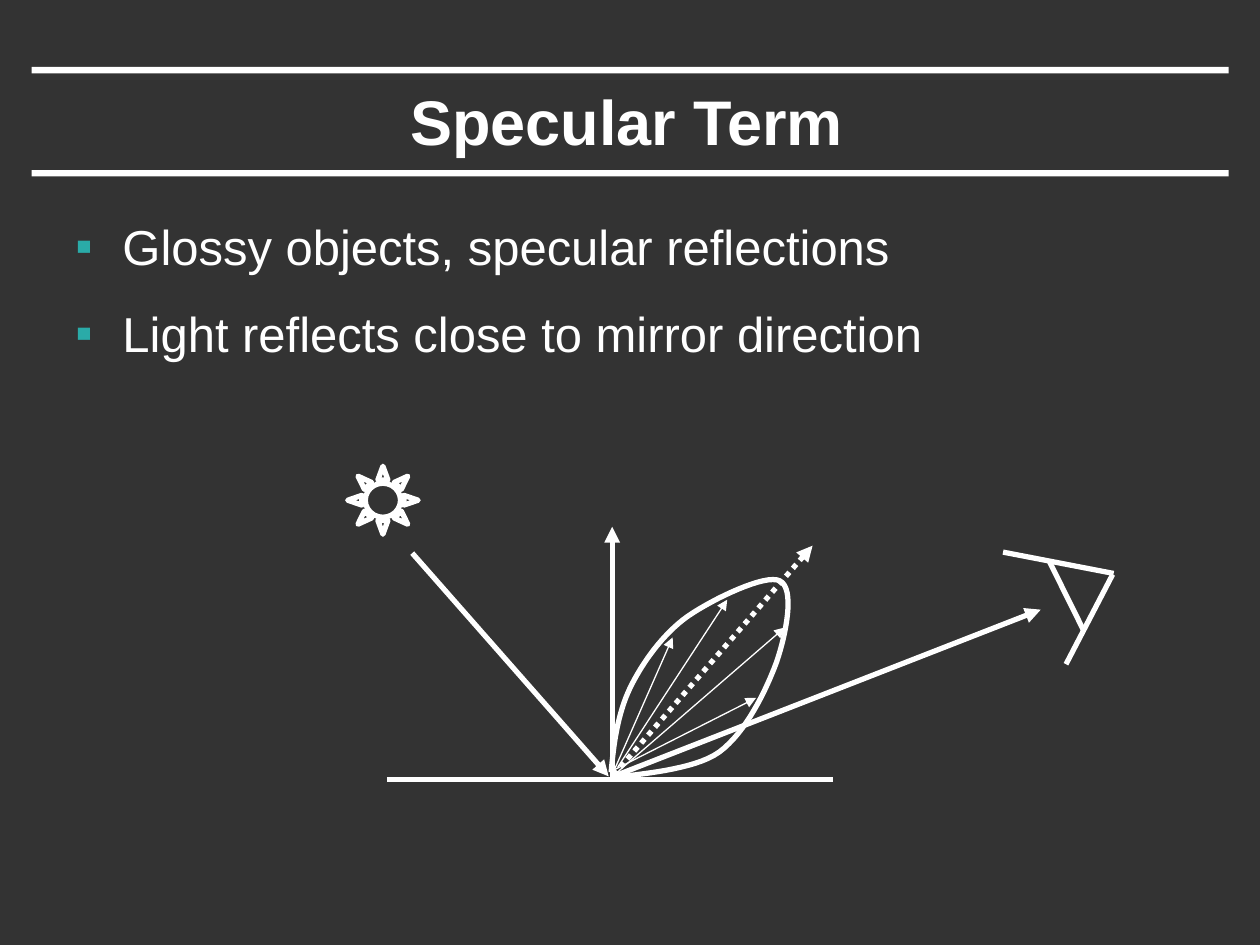
from pptx import Presentation
from pptx.dml.color import RGBColor
from pptx.enum.dml import MSO_LINE
from pptx.enum.shapes import MSO_CONNECTOR, MSO_SHAPE
from pptx.enum.text import MSO_ANCHOR, PP_ALIGN
from pptx.oxml.ns import qn
from pptx.util import Cm, Pt
from lxml import etree

RECTANGLE, SUN = MSO_SHAPE.RECTANGLE, MSO_SHAPE.SUN
STRAIGHT = MSO_CONNECTOR.STRAIGHT
DOTTED = MSO_LINE.ROUND_DOT
TOP, MIDDLE = MSO_ANCHOR.TOP, MSO_ANCHOR.MIDDLE
LEFT, CENTER = PP_ALIGN.LEFT, PP_ALIGN.CENTER

COLORS = {"background": "333333", "ink": "FFFFFF", "bullet": "2AABA8"}
FONT = "Arial"
THICK, THIN = 3, 0.75

# All positions are in centimetres.
TITLE = "Specular Term"
TITLE_BOX = (1.88, 1.47, 21.51, 1.9)
BULLETS = ["Glossy objects, specular reflections",
           "Light reflects close to mirror direction"]
BULLETS_BOX = (1.27, 4.24, 22.86, 13.97)
RULE_TOPS = [3.43, 1.35]
SUN_BOX = (7.01, 9.4, 1.42, 1.37)

SURFACE = ((7.8, 15.72), (16.79, 15.72))
EYE_LINES = [((20.22, 11.13), (22.45, 11.56)),
             ((22.43, 11.58), (21.49, 13.39)),
             ((21.16, 11.33), (21.84, 12.7))]
NORMAL = ((12.34, 15.75), (12.34, 10.62))
LIGHT_RAY = ((8.31, 11.15), (12.27, 15.65))
VIEW_RAY = ((12.37, 15.65), (20.98, 12.29))
MIRROR_RAY = ((12.37, 15.62), (16.38, 11.0))
LOBE_RAYS = [((12.34, 15.62), (13.56, 12.85)),
             ((12.45, 15.47), (14.66, 12.09)),
             ((12.29, 15.7), (15.82, 12.65)),
             ((12.34, 15.54), (15.24, 14.07))]
LOBE_START = (12.32, 15.57)
# Each curve: first control point, second control point, end point.
LOBE_CURVES = [((12.37, 14.99), (12.45, 14.4), (12.7, 13.87)),
               ((12.95, 13.36), (13.36, 12.78), (13.87, 12.42)),
               ((14.38, 12.07), (15.44, 11.56), (15.72, 11.71)),
               ((16.03, 11.86), (15.85, 12.78), (15.65, 13.36)),
               ((15.44, 13.92), (15.04, 14.76), (14.5, 15.16)),
               ((13.97, 15.54), (12.8, 15.6), (12.47, 15.67))]
CURVE_STEPS = 16


def color(name):
    return RGBColor.from_string(COLORS[name])


def lengths(values):
    return [Cm(value) for value in values]


def style_line(line, width=THICK):
    line.color.rgb = color("ink")
    line.width = Pt(width)


def add_line(slide, ends, width=THICK, arrow=False, dash=None):
    start, end = ends
    connector = slide.shapes.add_connector(STRAIGHT, *lengths(start + end))
    style_line(connector.line, width)
    if dash is not None:
        connector.line.dash_style = dash
    if arrow:
        etree.SubElement(connector.line._get_or_add_ln(), qn("a:tailEnd"), type="triangle")
    etree.SubElement(connector._element.spPr, qn("a:effectLst"))


def add_text(slide, place, paragraphs, size, bold=False, align=LEFT, anchor=TOP):
    box = slide.shapes.add_textbox(*lengths(place))
    frame = box.text_frame
    frame.word_wrap = True
    frame.vertical_anchor = anchor
    for index, text in enumerate(paragraphs):
        para = frame.add_paragraph() if index else frame.paragraphs[0]
        para.alignment = align
        span = para.add_run()
        span.text = text
        span.font.name = FONT
        span.font.size = Pt(size)
        span.font.bold = bold
        span.font.color.rgb = color("ink")
    return frame


def add_bullet(para):
    para.space_after = Pt(16)
    properties = para._p.get_or_add_pPr()
    properties.set("marL", str(Cm(0.95)))
    properties.set("indent", str(-Cm(0.95)))
    tint = etree.SubElement(properties, qn("a:buClr"))
    etree.SubElement(tint, qn("a:srgbClr"), val=COLORS["bullet"])
    etree.SubElement(properties, qn("a:buFont"), typeface=FONT)
    etree.SubElement(properties, qn("a:buChar"), char="▪")


def curve_points(start, curves):
    """Return points along a chain of cubic Bézier curves."""
    points = []
    for first, second, end in curves:
        for step in range(1, CURVE_STEPS + 1):
            t = step / CURVE_STEPS
            u = 1 - t
            points.append(tuple(
                Cm(u**3 * a + 3 * u * u * t * b + 3 * u * t * t * c + t**3 * d)
                for a, b, c, d in zip(start, first, second, end)))
        start = end
    return points


def add_lobe(slide):
    builder = slide.shapes.build_freeform(*lengths(LOBE_START))
    builder.add_line_segments(curve_points(LOBE_START, LOBE_CURVES), close=False)
    lobe = builder.convert_to_shape()
    lobe.shadow.inherit = False
    lobe.fill.background()
    style_line(lobe.line)


def main():
    deck = Presentation()
    deck.slide_width, deck.slide_height = Cm(25.4), Cm(19.05)
    slide = deck.slides.add_slide(deck.slide_layouts[6])
    slide.background.fill.solid()
    slide.background.fill.fore_color.rgb = color("background")

    for top in RULE_TOPS:
        rule = slide.shapes.add_shape(RECTANGLE, *lengths((0.64, top, 24.13, 0.13)))
        rule.shadow.inherit = False
        rule.fill.solid()
        rule.fill.fore_color.rgb = color("ink")
        rule.line.fill.background()

    add_text(slide, TITLE_BOX, [TITLE], 36, bold=True, align=CENTER, anchor=MIDDLE)
    for para in add_text(slide, BULLETS_BOX, BULLETS, 28).paragraphs:
        add_bullet(para)

    sun = slide.shapes.add_shape(SUN, *lengths(SUN_BOX))
    sun.shadow.inherit = False
    sun.fill.background()
    style_line(sun.line)

    for ends in [SURFACE] + EYE_LINES:
        add_line(slide, ends)
    for ends in [NORMAL, LIGHT_RAY, VIEW_RAY]:
        add_line(slide, ends, arrow=True)
    add_line(slide, MIRROR_RAY, arrow=True, dash=DOTTED)
    add_lobe(slide)
    for ends in LOBE_RAYS:
        add_line(slide, ends, THIN, arrow=True)

    deck.save("out.pptx")


if __name__ == "__main__":
    main()
